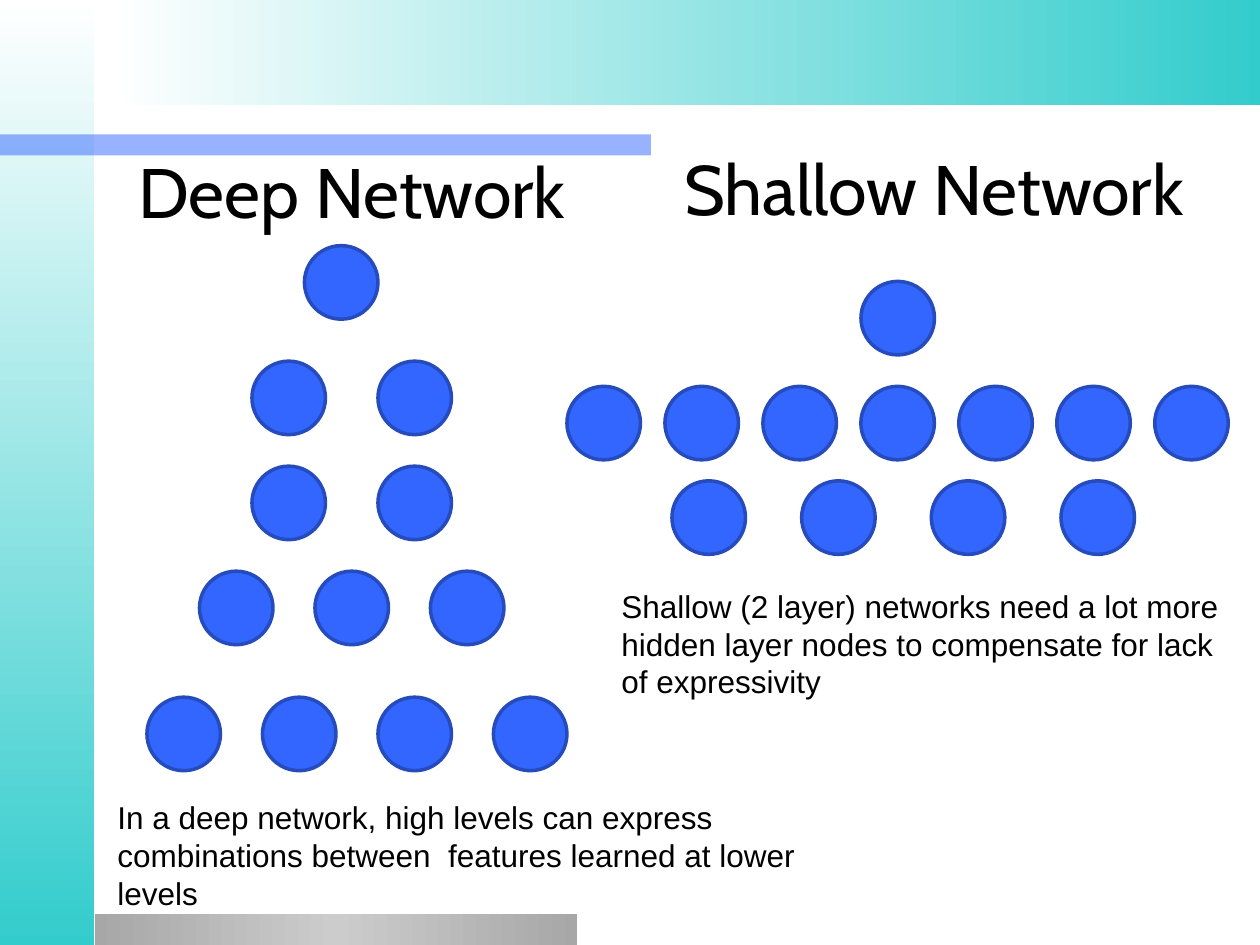
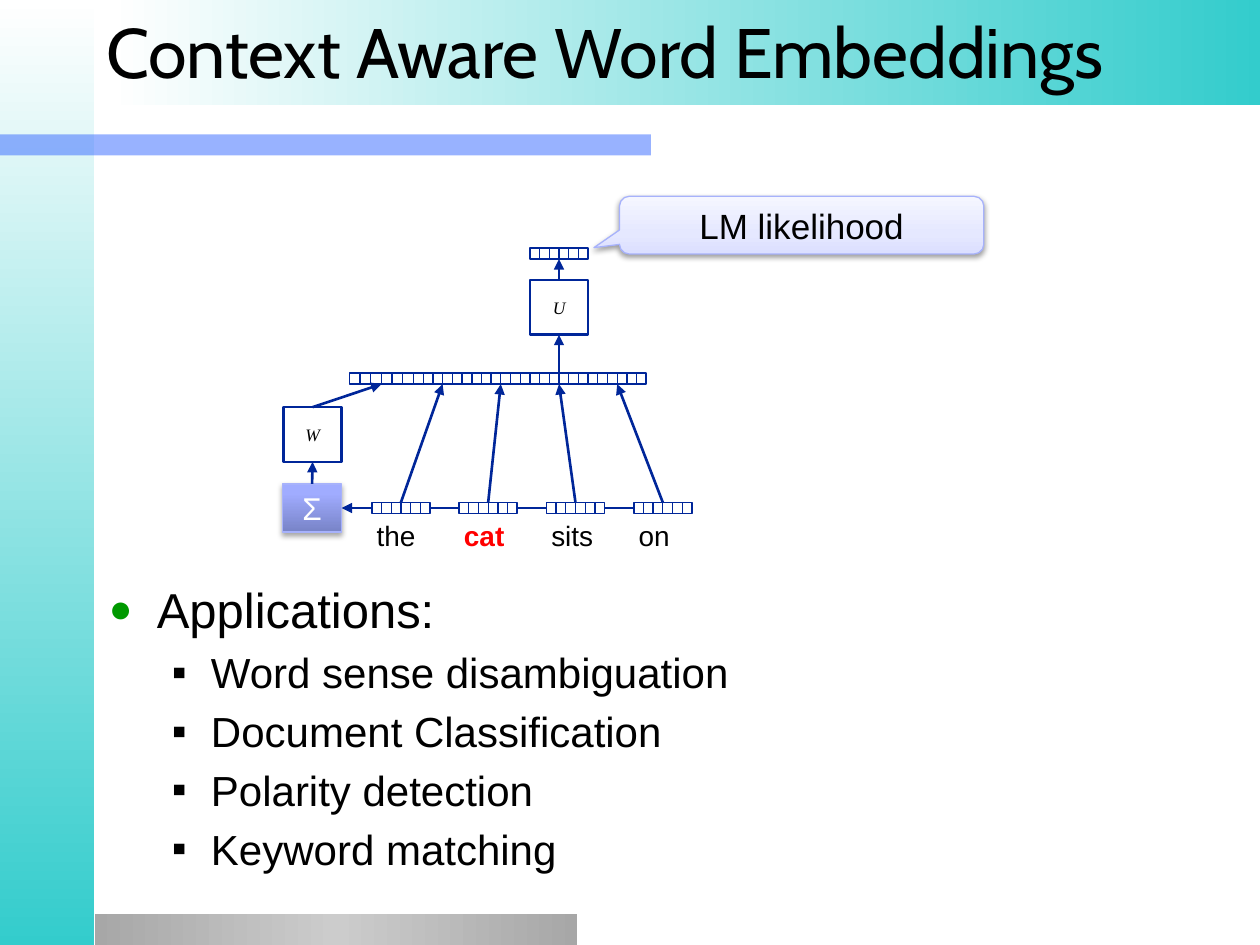
from collections import namedtuple

from lxml import etree
from pptx import Presentation
from pptx import util as u
from pptx.dml.color import RGBColor
from pptx.enum import shapes, text
from pptx.oxml.ns import qn

COLORS = {
    "white": "FFFFFF", "black": "000000", "red": "FF0000", "green": "009900",
    "teal": "33CCCC", "bar": "3366FF", "grey": "A7A7A7", "silver": "CCCCCC",
    "node_line": "264BBD", "navy": "002699", "lilac_line": "A7B2FB",
}
CALLOUT_STOPS = [(0, "DBDFFF"), (35, "E5E8FF"), (100, "F5F6FF")]
SUM_STOPS = [(0, "7883C7"), (80, "A0ACFF"), (100, "A2AEFF")]
SHAPE = shapes.MSO_SHAPE
ALIGN = text.PP_ALIGN
MIDDLE = text.MSO_ANCHOR.MIDDLE
TOP, LEFT, BOTTOM, RIGHT = range(4)
HEADING = dict(size=40, font="Cabin", anchor=MIDDLE)


class Grid(namedtuple("Grid", "left top col row")):
    """A grid whose origin and cell size are in inches."""

    def place(self, c, r, w, h):
        return (u.Inches(self.left + c * self.col), u.Inches(self.top + r * self.row),
                u.Inches(w * self.col), u.Inches(h * self.row))


PAGE = Grid(0, 0, 1 / 12, 1 / 12)  # 120 columns by 90 rows


def rgb(name):
    return RGBColor.from_string(COLORS.get(name, name))


def add_xml(parent, tag, **attrs):
    return etree.SubElement(parent, qn(tag), {k: str(v) for k, v in attrs.items()})


def write(sp, content, size=18, font="Arial", color="black", bold=False, italic=False,
          align=ALIGN.LEFT, anchor=text.MSO_ANCHOR.TOP, inset=(0.1, 0.05)):
    tf = sp.text_frame
    tf.word_wrap = True
    tf.vertical_anchor = anchor
    tf.margin_left = tf.margin_right = u.Inches(inset[0])
    tf.margin_top = tf.margin_bottom = u.Inches(inset[1])
    p = tf.paragraphs[0]
    p.alignment = align
    add_run(p, content, size, font, color, bold, italic)


def add_run(p, content, size, font="Arial", color="black", bold=False, italic=False):
    r = p.add_run()
    r.text = content
    r.font.size, r.font.name = u.Pt(size), font
    r.font.bold, r.font.italic = bold, italic
    r.font.color.rgb = rgb(color)


def add_text(slide, box, content, **fmt):
    write(slide.shapes.add_textbox(*box), content, **fmt)


def add_box(parent, box, kind=SHAPE.RECTANGLE, fill="white", line=None, width=1.0):
    sp = parent.shapes.add_shape(kind, *box)
    sp.shadow.inherit = False
    sp.fill.solid()
    sp.fill.fore_color.rgb = rgb(fill)
    if line:
        sp.line.color.rgb = rgb(line)
        sp.line.width = u.Pt(width)
    else:
        sp.line.fill.background()
    return sp


def set_gradient(sp, stops, angle):
    sp.fill.background()
    spPr = sp.element.spPr
    grad = etree.Element(qn("a:gradFill"), rotWithShape="1")
    stop_list = add_xml(grad, "a:gsLst")
    for pos, color in stops:
        gs = add_xml(stop_list, "a:gs", pos=pos * 1000)
        add_xml(gs, "a:srgbClr", val=COLORS.get(color, color))
    add_xml(grad, "a:lin", ang=angle * 60000, scaled=0)
    spPr.replace(spPr.find(qn("a:noFill")), grad)


def set_shadow(sp, alpha, blur, dist):
    effects = sp.element.spPr.find(qn("a:effectLst"))
    shadow = add_xml(effects, "a:outerShdw", blurRad=u.Pt(blur), dist=u.Pt(dist),
                     dir=90 * 60000, rotWithShape=0)
    color = add_xml(shadow, "a:srgbClr", val=COLORS["black"])
    add_xml(color, "a:alpha", val=alpha * 1000)


def add_line(parent, ends, width):
    c = parent.shapes.add_connector(shapes.MSO_CONNECTOR.STRAIGHT, *ends)
    c.line.color.rgb = rgb("navy")
    c.line.width = u.Pt(width)
    add_xml(c.element.spPr, "a:effectLst")
    return c


def add_arrow(slide, start, start_side, end, end_side):
    c = add_line(slide, (0, 0, 0, 0), 1.5)
    c.begin_connect(start, start_side)
    c.end_connect(end, end_side)
    add_xml(c.element.spPr.find(qn("a:ln")), "a:tailEnd", type="triangle")


def add_bands(prs, slide):
    """Draw the bands and move them to the master, behind everything."""
    sidebar = add_box(slide, PAGE.place(0, 0, 9, 90))
    set_gradient(sidebar, [(0, "white"), (100, "teal")], 90)
    bar = add_box(slide, PAGE.place(0, 12.8, 62, 2), fill="bar")
    color = bar.element.spPr.find(qn("a:solidFill"))[0]
    add_xml(color, "a:alpha", val=50000)
    footer = add_box(slide, PAGE.place(9, 87, 46, 3))
    set_gradient(footer, [(0, "grey"), (50, "silver"), (100, "grey")], 0)
    header = add_box(slide, PAGE.place(10.5, 0, 109.5, 10))
    set_gradient(header, [(0, "white"), (100, "teal")], 0)
    tree = prs.slide_master.shapes.element
    for i, band in enumerate((sidebar, bar, footer, header)):
        tree.insert(2 + i, band.element)


def add_network(slide, grid, layers):
    """Each layer is (first column, row, column pitch, node count)."""
    for col, row, pitch, count in layers:
        for i in range(count):
            add_box(slide, grid.place(col + i * pitch, row, 7, 7), SHAPE.OVAL,
                    "bar", "node_line", 2)


def add_vector(slide, grid, col, row, width=6):
    """A strip of six cells; returns its outline."""
    group = slide.shapes.add_group_shape()
    outline = add_box(group, grid.place(col, row, width, 1), line="navy")
    for i in range(1, 6):
        x, y, _, h = grid.place(col + i * width / 6, row, 0, 1)
        add_line(group, (x, y, x, y + h), 0.75)
    return outline


def add_matrix(slide, grid, col, row, name):
    sp = add_box(slide, grid.place(col, row, 6, 5), line="navy", width=1.5)
    write(sp, name, size=10, font="Times New Roman", italic=True,
          align=ALIGN.CENTER, anchor=MIDDLE)
    return sp


def add_language_model(slide, grid):
    context = add_vector(slide, grid, 6.8, 11.4, 6.6)
    slots = [add_vector(slide, grid, 13.4 + 6 * i, 11.4) for i in range(4)]
    logits = add_vector(slide, grid, 25.4, 0)
    out_matrix = add_matrix(slide, grid, 25.4, 2.9, "U")
    context_matrix = add_matrix(slide, grid, 0, 14.5, "W")

    total = add_box(slide, grid.place(-0.1, 21.5, 6.1, 4.4), line="lilac_line", width=0.75)
    set_gradient(total, SUM_STOPS, 270)
    set_shadow(total, 35, 3.1, 1.8)
    write(total, "Σ", color="white", align=ALIGN.CENTER, anchor=MIDDLE, inset=(0.08, 0.04))

    words = ["the", "cat", "sits", "on"]
    cols = [9.1 + 9 * i for i in range(len(words))]
    last = add_vector(slide, grid, cols[-1], 23.2)
    add_arrow(slide, last, LEFT, total, RIGHT)  # runs behind the other words
    vectors = [add_vector(slide, grid, c, 23.2) for c in cols[:-1]] + [last]
    for word, col, vector, slot in zip(words, cols, vectors, slots):
        target = word == "cat"
        add_text(slide, grid.place(col + 0.5, 24.7, 8, 3.1), word, size=16, inset=(0, 0),
                 color="red" if target else "black", bold=target)
        add_arrow(slide, vector, TOP, slot, BOTTOM)
    for start, end in ((total, context_matrix), (context_matrix, context),
                       (slots[2], out_matrix), (out_matrix, logits)):
        add_arrow(slide, start, TOP, end, BOTTOM)


def add_callout(slide, box, content):
    sp = add_box(slide, box, SHAPE.ROUNDED_RECTANGULAR_CALLOUT, line="lilac_line", width=0.75)
    for i, value in enumerate((-0.57, 0.39, 0.17)):
        sp.adjustments[i] = value
    set_gradient(sp, CALLOUT_STOPS, 270)
    set_shadow(sp, 38, 3.1, 1.6)
    write(sp, content, size=20, align=ALIGN.CENTER, anchor=MIDDLE)


def add_bullets(slide, box, heading, items):
    tf = slide.shapes.add_textbox(*box).text_frame
    tf.word_wrap = True
    for i, item in enumerate([heading] + items):
        p = tf.paragraphs[0] if i == 0 else tf.add_paragraph()
        size, mark, left, hang = (24, "▪", 0.81, 0.31) if i else (28, "●", 0.38, 0.38)
        p.level = min(i, 1)
        p.space_before = u.Pt(size * 0.2)
        pPr = p._p.get_or_add_pPr()
        pPr.set("marL", str(u.Inches(left)))
        pPr.set("indent", str(-u.Inches(hang)))
        if i == 0:
            add_xml(add_xml(pPr, "a:buClr"), "a:srgbClr", val=COLORS["green"])
            add_xml(pPr, "a:buSzPct", val=80000)
        add_xml(pPr, "a:buFont", typeface="Arial")
        add_xml(pPr, "a:buChar", char=mark)
        add_run(p, item, size)


def build_networks_slide(slide):
    add_text(slide, PAGE.place(12, 12.1, 47, 12), "Deep Network", **HEADING)
    add_text(slide, PAGE.place(64, 11.9, 53, 12), "Shallow Network", **HEADING)
    add_network(slide, PAGE, [(29, 23.4, 0, 1), (24, 34.4, 12, 2), (24, 44.4, 12, 2),
                              (19, 54.4, 11, 3), (14, 66.4, 11, 4)])
    add_network(slide, PAGE, [(82, 26.8, 0, 1), (54, 36.8, 9.33, 7), (64, 45.8, 12.35, 4)])
    add_text(slide, PAGE.place(58, 55.3, 62, 12.1),
             "Shallow (2 layer) networks need a lot more hidden layer nodes "
             "to compensate for lack of expressivity")
    add_text(slide, PAGE.place(10, 75.4, 72, 12.1),
             "In a deep network, high levels can express combinations between  "
             "features learned at lower levels")


def build_embeddings_slide(slide):
    title = slide.shapes.title
    title.left, title.top, title.width, title.height = PAGE.place(8.9, -0.4, 111.1, 10.4)
    write(title, "Context Aware Word Embeddings", **HEADING)
    add_bullets(slide, PAGE.place(9.2, 54.6, 102, 29.3), "Applications:",
                ["Word sense disambiguation", "Document Classification",
                 "Polarity detection", "Keyword matching"])
    add_language_model(slide, Grid(2.25, 1.97, 0.077, 0.087))
    add_callout(slide, PAGE.place(59, 18.7, 34.7, 5.5), "LM likelihood")


def main():
    prs = Presentation()
    prs.slide_width, prs.slide_height = u.Inches(10), u.Inches(7.5)
    title_only, blank = prs.slide_layouts[5], prs.slide_layouts[6]
    networks = prs.slides.add_slide(blank)
    add_bands(prs, networks)
    build_networks_slide(networks)
    build_embeddings_slide(prs.slides.add_slide(title_only))
    prs.save("out.pptx")


if __name__ == "__main__":
    main()
